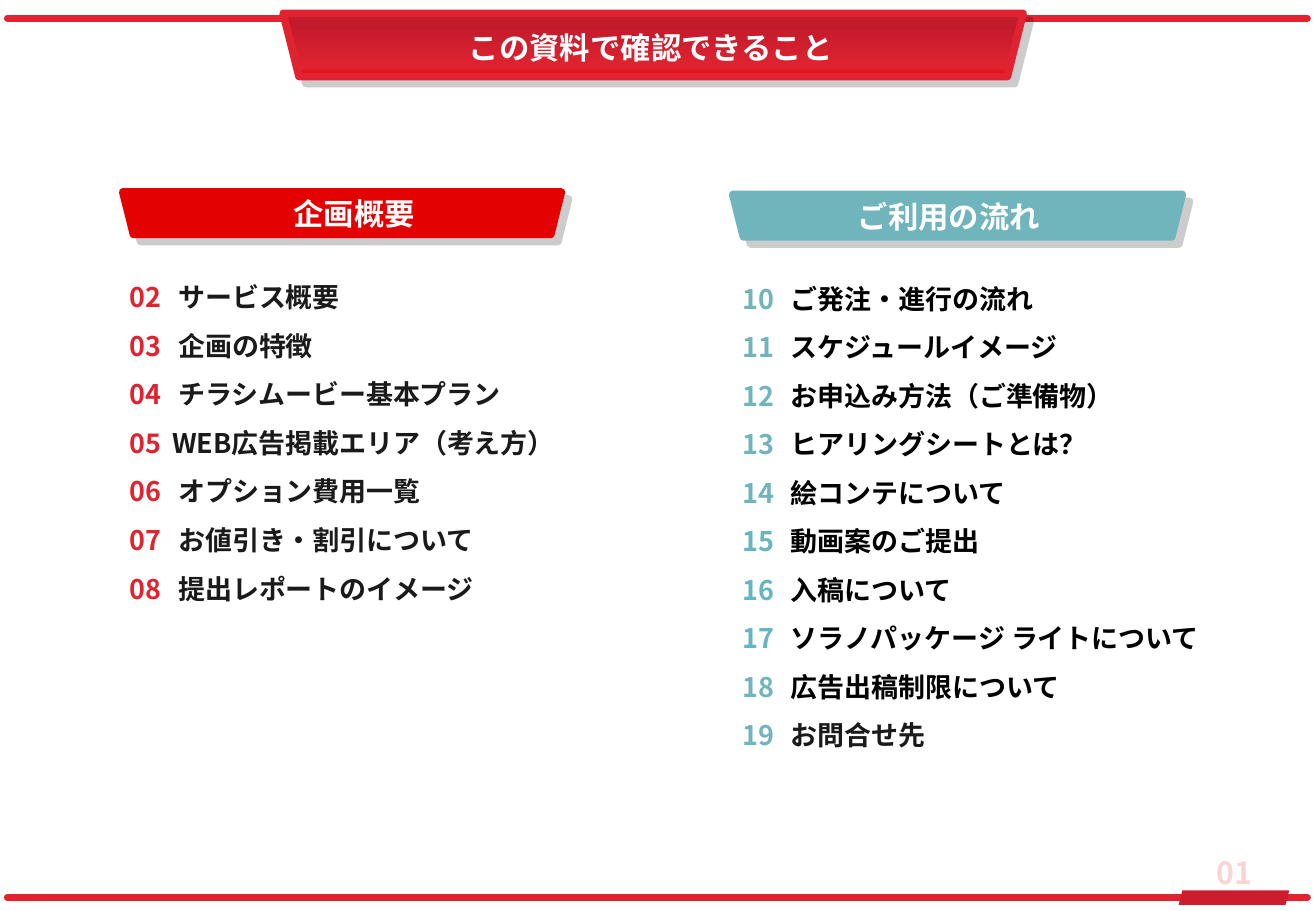
from dataclasses import dataclass

from lxml.etree import SubElement as Sub
from pptx import Presentation
from pptx.dml.color import RGBColor as RGB
from pptx.enum.shapes import MSO_CONNECTOR as CONN, MSO_SHAPE as SHAPE
from pptx.enum.text import MSO_AUTO_SIZE as FIT, PP_ALIGN as ALIGN
from pptx.oxml.ns import qn
from pptx.util import Inches, Pt


@dataclass(frozen=True)
class Theme:
    font: str = "Noto Sans CJK JP"
    red: str = "E0232F"
    dark_red: str = "CB1D2D"
    plan_red: str = "E30201"
    teal: str = "71B5BC"
    light_teal: str = "65B5C3"
    pink: str = "F9D4D4"
    white: str = "FFFFFF"
    ink: str = "1A1A1A"
    black: str = "000000"
    title_stops: tuple = ((22, "C41B2C"), (87, "E0232F"), (100, "E30101"))
    heading: int = 18
    item: int = 16


class Deck:
    def __init__(self, prs, theme):
        self.theme = theme
        self.slide = prs.slides.add_slide(prs.slide_layouts[6])
        self.shapes = self.slide.shapes

    def rule(self, y):
        s = self.shapes.add_connector(
            CONN.STRAIGHT, Inches(0.06), Inches(y), Inches(10.76), Inches(y))
        s.line.color.rgb = RGB.from_string(self.theme.red)
        s.line.width = Pt(4)
        s.line._get_or_add_ln().set("cap", "rnd")
        Sub(s._element.spPr, qn("a:effectLst"))

    def shape(self, kind, box, fill):
        s = self.shapes.add_shape(kind, *map(Inches, box))
        s.shadow.inherit = False
        s.fill.solid()
        s.fill.fore_color.rgb = RGB.from_string(fill)
        s.line.fill.background()
        return s

    def banner(self, box, color, stops=()):
        s = self.shape(SHAPE.TRAPEZOID, box, color)
        s.rotation = 180
        s.line.color.rgb = RGB.from_string(color)
        s.line.width = Pt(4.5)
        Sub(s.line._get_or_add_ln(), qn("a:round"))
        if stops:
            self.gradient(s, stops)
        effects = s._element.spPr.find(qn("a:effectLst"))
        shadow = Sub(effects, qn("a:outerShdw"), blurRad="0",
                     dist=str(Pt(6)), dir="2700000", rotWithShape="0")
        tint = Sub(shadow, qn("a:srgbClr"), val=self.theme.black)
        Sub(tint, qn("a:alpha"), val="20000")

    def gradient(self, s, stops):
        s.fill.gradient()
        grad = s._element.spPr.find(qn("a:gradFill"))
        for child in list(grad):
            grad.remove(child)
        grad.set("rotWithShape", "1")
        gs_list = Sub(grad, qn("a:gsLst"))
        for pos, color in stops:
            gs = Sub(gs_list, qn("a:gs"), pos=str(pos * 1000))
            Sub(gs, qn("a:srgbClr"), val=color)
        Sub(grad, qn("a:lin"), ang="16200000", scaled="0")

    def frame(self, box, wrap=True):
        tf = self.shapes.add_textbox(*map(Inches, box)).text_frame
        for name, value in {"word_wrap": wrap, "auto_size": FIT.SHAPE_TO_FIT_TEXT}.items():
            setattr(tf, name, value)
        return tf

    def run(self, p, text, size, color):
        r = p.add_run()
        r.text = text
        style = {"name": self.theme.font, "size": Pt(size), "bold": True}
        for name, value in style.items():
            setattr(r.font, name, value)
        r.font.color.rgb = RGB.from_string(color)
        Sub(r._r.get_or_add_rPr(), qn("a:ea"), typeface=self.theme.font)

    def label(self, box, text, color, align=ALIGN.CENTER, wrap=True):
        p = self.frame(box, wrap).paragraphs[0]
        p.alignment = align
        self.run(p, text, self.theme.heading, color)

    def contents(self, box, first, items, number_color, text_color, special):
        tf = self.frame(box)
        for i, text in enumerate(items):
            page = first + i
            row = {"number": number_color, "text": text_color, "indent": 0.4}
            row.update(special.get(page, {}))
            p = tf.paragraphs[0] if i == 0 else tf.add_paragraph()
            p.line_spacing = 1.5
            indent = Inches(row["indent"])
            for name, value in {"marL": indent, "indent": -indent}.items():
                p._p.get_or_add_pPr().set(name, str(value))
            self.run(p, f"{page:02}\t", self.theme.item, row["number"])
            self.run(p, text, self.theme.item, row["text"])


PLAN = ["サービス概要", "企画の特徴", "チラシムービー基本プラン", "WEB広告掲載エリア（考え方）",
        "オプション費用一覧", "お値引き・割引について", "提出レポートのイメージ"]
FLOW = ["ご発注・進行の流れ", "スケジュールイメージ", "お申込み方法（ご準備物）",
        "ヒアリングシートとは？", "絵コンテについて", "動画案のご提出", "入稿について",
        "ソラノパッケージ ライトについて", "広告出稿制限について", "お問合せ先"]


def main():
    prs = Presentation()
    prs.slide_width, prs.slide_height = Inches(10.83), Inches(7.5)
    t = Theme()
    deck = Deck(prs, t)

    for y in (7.39, 0.15):
        deck.rule(y)
    deck.shape(SHAPE.PARALLELOGRAM, (9.7, 7.33, 0.91, 0.12), t.dark_red)
    deck.banner((2.33, 0.11, 6.09, 0.52), t.red, t.title_stops)
    deck.label((9.89, 6.98, 0.54, 0.4), "01", t.pink, wrap=False)

    deck.banner((1.01, 1.58, 3.61, 0.35), t.plan_red)
    deck.label((1.76, 1.56, 2.31, 0.4), "企画概要", t.white)
    deck.contents((0.97, 2.13, 4.57, 2.89), 2, PLAN, t.red, t.ink, {5: {"indent": 0.35}})

    deck.banner((6.03, 1.6, 3.7, 0.35), t.teal)
    deck.label((6.63, 1.58, 2.36, 0.4), "ご利用の流れ", t.white)
    special = {page: {"number": t.light_teal} for page in (15, 16, 17)}
    special[19] = {"text": t.ink}
    deck.contents((6.01, 2.14, 4.46, 4.11), 10, FLOW, t.teal, t.black, special)

    deck.label((3.76, 0.19, 3.23, 0.4), "この資料で確認できること", t.white, ALIGN.LEFT, False)
    prs.save("out.pptx")


if __name__ == "__main__":
    main()
